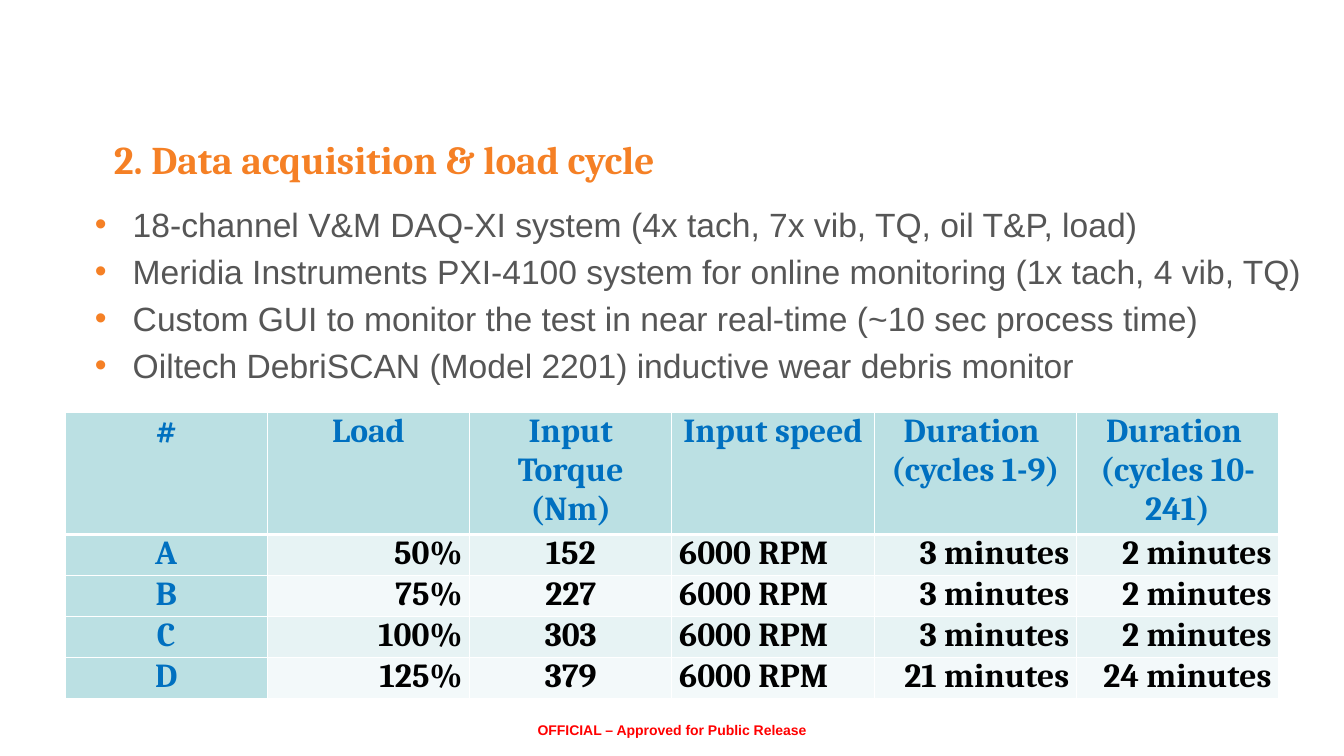
from dataclasses import dataclass

from lxml.etree import SubElement as add_element
from pptx import Presentation
from pptx.dml.color import RGBColor as Color
from pptx.enum.text import MSO_ANCHOR as Anchor, MSO_AUTO_SIZE as AutoSize, PP_ALIGN as Align
from pptx.oxml.ns import qn
from pptx.util import Emu, Pt

EMU_PER_PX = 9525  # 96 px to the inch


@dataclass(frozen=True)
class Theme:
    orange: str = "F58025"
    grey: str = "565656"
    red: str = "FF0000"
    blue: str = "0070C0"
    black: str = "000000"
    white: str = "FFFFFF"
    head_fill: str = "BBE0E3"
    band_fills: tuple = ("E7F3F4", "F3F9FA")
    sans: str = "Arial"
    serif: str = "Cambria"
    title_size: int = 28
    text_size: int = 24
    marking_size: int = 10


THEME = Theme()

SYSTEMS = [
    "18-channel V&M DAQ-XI system (4x tach, 7x vib, TQ, oil T&P, load)",
    "Meridia Instruments PXI-4100 system for online monitoring (1x tach, 4 vib, TQ)",
    "Custom GUI to monitor the test in near real-time (~10 sec process time)",
    "Oiltech DebriSCAN (Model 2201) inductive wear debris monitor",
]
LOAD_CYCLE = [
    ["#", "Load", "Input Torque (Nm)", "Input speed",
     "Duration \n(cycles 1-9)", "Duration \n(cycles 10-241)"],
    ["A", "50%", "152", "6000 RPM", "3 minutes", "2 minutes"],
    ["B", "75%", "227", "6000 RPM", "3 minutes", "2 minutes"],
    ["C", "100%", "303", "6000 RPM", "3 minutes", "2 minutes"],
    ["D", "125%", "379", "6000 RPM", "21 minutes", "24 minutes"],
]
COLUMN_ALIGNS = [Align.CENTER, Align.RIGHT, Align.CENTER,
                 Align.JUSTIFY, Align.RIGHT, Align.RIGHT]


def px(length):
    return Emu(length * EMU_PER_PX)


def set_format(target, values):
    for name, value in values.items():
        setattr(target, name, value)


def style_font(font, name, size, color, bold):
    set_format(font, {"name": name, "size": Pt(size), "bold": bold})
    font.color.rgb = Color.from_string(color)


def add_bullet(paragraph, color, indent):
    properties = paragraph._p.get_or_add_pPr()
    properties.set("marL", str(px(indent)))
    properties.set("indent", str(-px(indent)))
    bullet_color = add_element(properties, qn("a:buClr"))
    add_element(bullet_color, qn("a:srgbClr"), val=color)
    add_element(properties, qn("a:buFont"), typeface=THEME.sans)
    add_element(properties, qn("a:buChar"), char="•")


def add_text(slide, box, lines, font, align=Align.LEFT, bulleted=False):
    frame = slide.shapes.add_textbox(*map(px, box)).text_frame
    set_format(frame, {"word_wrap": True, "auto_size": AutoSize.NONE,
                       "vertical_anchor": Anchor.TOP})
    for index, line in enumerate(lines):
        paragraph = frame.add_paragraph() if index else frame.paragraphs[0]
        paragraph.text = line
        paragraph.alignment = align
        if index:
            paragraph.space_before = Pt(4.8)
        if bulleted:
            add_bullet(paragraph, THEME.orange, indent=36)
        style_font(paragraph.runs[0].font, *font)


def add_borders(cell, widths):
    properties = cell._tc.get_or_add_tcPr()
    for side, width in widths.items():
        line = add_element(properties, qn(f"a:ln{side}"), w=str(Pt(width)))
        fill = add_element(line, qn("a:solidFill"))
        add_element(fill, qn("a:srgbClr"), val=THEME.white)


def fill_cell(cell, text, row, column):
    is_head = row == 0 or column == 0
    set_format(cell, {"margin_left": px(7), "margin_right": px(7),
                      "margin_top": 0, "margin_bottom": 0,
                      "vertical_anchor": Anchor.TOP, "text": text})
    add_borders(cell, {"L": 1, "R": 1, "T": 3 if row == 1 else 1,
                       "B": 3 if row == 0 else 1})
    cell.fill.solid()
    cell.fill.fore_color.rgb = Color.from_string(
        THEME.head_fill if is_head else THEME.band_fills[(row - 1) % 2])
    for paragraph in cell.text_frame.paragraphs:
        paragraph.alignment = Align.CENTER if row == 0 else COLUMN_ALIGNS[column]
        style_font(paragraph.runs[0].font, THEME.serif, THEME.text_size,
                   THEME.blue if is_head else THEME.black, True)


def add_load_table(slide, box, rows, head_height, row_height):
    table = slide.shapes.add_table(len(rows), len(rows[0]), *map(px, box)).table
    for row, texts in enumerate(rows):
        table.rows[row].height = px(row_height if row else head_height)
        for column, text in enumerate(texts):
            fill_cell(table.cell(row, column), text, row, column)


def main():
    presentation = Presentation()
    set_format(presentation, {"slide_width": px(1280), "slide_height": px(720)})
    slide = presentation.slides.add_slide(presentation.slide_layouts[6])

    # Measuring systems
    add_text(slide, (81, 189, 1199, 468), SYSTEMS,
             (THEME.sans, THEME.text_size, THEME.grey, False), bulleted=True)

    # Heading
    add_text(slide, (99, 124, 1089, 65), ["2. Data acquisition & load cycle"],
             (THEME.serif, THEME.title_size, THEME.orange, True))

    # Release marking
    add_text(slide, (487, 682, 306, 23), ["OFFICIAL – Approved for Public Release"],
             (THEME.sans, THEME.marking_size, THEME.red, True), Align.CENTER)

    # Load cycle
    add_load_table(slide, (62, 393, 1156, 272), LOAD_CYCLE,
                   head_height=116, row_height=39)

    presentation.save("out.pptx")


if __name__ == "__main__":
    main()
